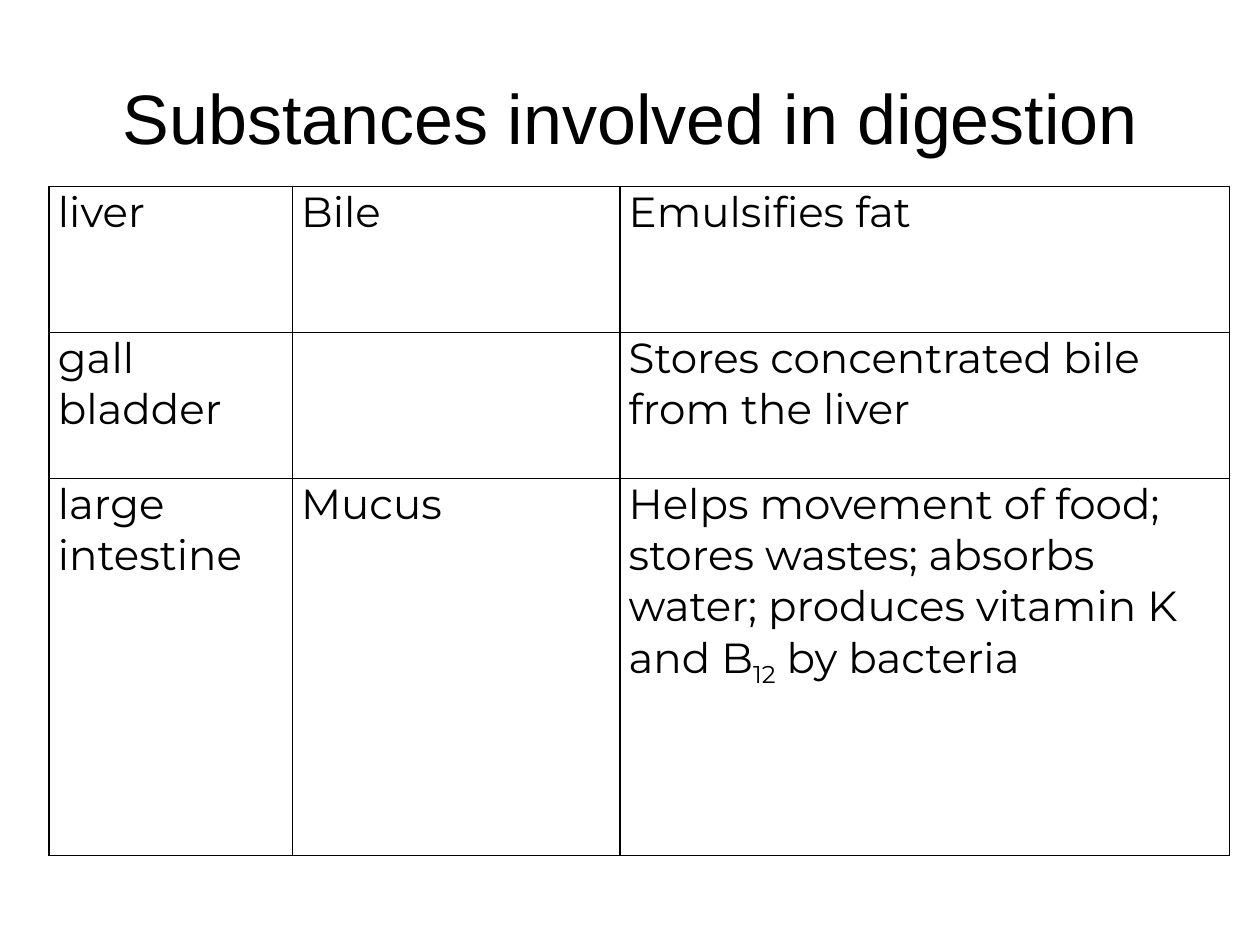
"""Build a slide with a table of substances involved in digestion."""
from dataclasses import dataclass

from lxml import etree
from pptx import Presentation
from pptx.dml.color import RGBColor
from pptx.enum import text
from pptx.oxml import ns
from pptx.util import Inches, Pt

COLORS = {"ink": "000000", "paper": "FFFFFF"}
COL_WIDTHS = (1.93, 2.6, 4.84)


@dataclass
class Organ:
    name: str
    substance: str
    role: tuple[str, ...]
    height: float


ORGANS = (
    Organ("liver", "Bile", ("Emulsifies fat",), 1.16),
    Organ("gall bladder", "", ("Stores concentrated bile from the liver",), 1.16),
    Organ(
        "large intestine",
        "Mucus",
        (
            "Helps movement of food; stores wastes; absorbs water; "
            "produces vitamin K and B",
            "12",
            " by bacteria",
        ),
        2.99,
    ),
)


def add_run(p, content: str, *, size: int = 24, font: str = "Montserrat",
            color: str = "ink", baseline: int = 0) -> None:
    r = p.add_run()
    r.text = content
    r.font.size = Pt(size)
    r.font.name = font
    r.font.color.rgb = RGBColor.from_string(COLORS[color])
    if baseline:
        r.font._element.set("baseline", str(baseline * 1000))


def add_borders(cell, width: float = 1) -> None:
    tc_pr = cell._tc.get_or_add_tcPr()
    for side in "LRTB":
        ln = etree.SubElement(tc_pr, ns.qn(f"a:ln{side}"), w=str(Pt(width)))
        fill = etree.SubElement(ln, ns.qn("a:solidFill"))
        etree.SubElement(fill, ns.qn("a:srgbClr"), val=COLORS["ink"])


def fill_cell(cell, parts: tuple[str, ...]) -> None:
    cell.margin_left = cell.margin_right = Inches(0.07)
    cell.margin_top = cell.margin_bottom = 0
    add_borders(cell)
    cell.fill.solid()
    cell.fill.fore_color.rgb = RGBColor.from_string(COLORS["paper"])
    p = cell.text_frame.paragraphs[0]
    for i, part in enumerate(parts):
        if part:
            add_run(p, part, baseline=-25 if i % 2 else 0)


def add_title(s, content: str) -> None:
    sp = s.shapes.title
    sp.left, sp.top = Inches(0.5), Inches(0.3)
    sp.width, sp.height = Inches(9), Inches(1.25)
    tf = sp.text_frame
    tf.word_wrap = True
    tf.vertical_anchor = text.MSO_ANCHOR.MIDDLE
    p = tf.paragraphs[0]
    p.alignment = text.PP_ALIGN.CENTER
    add_run(p, content, size=40, font="Arial")


def add_organ_table(s, organs: tuple[Organ, ...]) -> None:
    table = s.shapes.add_table(
        len(organs), len(COL_WIDTHS), Inches(0.39), Inches(1.48),
        Inches(sum(COL_WIDTHS)), Inches(sum(o.height for o in organs)),
    ).table
    table.first_row = table.horz_banding = False
    for column, width in zip(table.columns, COL_WIDTHS):
        column.width = Inches(width)
    for row, organ in zip(table.rows, organs):
        row.height = Inches(organ.height)
        contents = ((organ.name,), (organ.substance,), organ.role)
        for cell, parts in zip(row.cells, contents):
            fill_cell(cell, parts)


def main() -> None:
    prs = Presentation()
    prs.slide_width, prs.slide_height = Inches(10), Inches(7.5)
    s = prs.slides.add_slide(prs.slide_layouts[5])
    add_title(s, "Substances involved in digestion")
    add_organ_table(s, ORGANS)
    prs.save("out.pptx")


if __name__ == "__main__":
    main()
